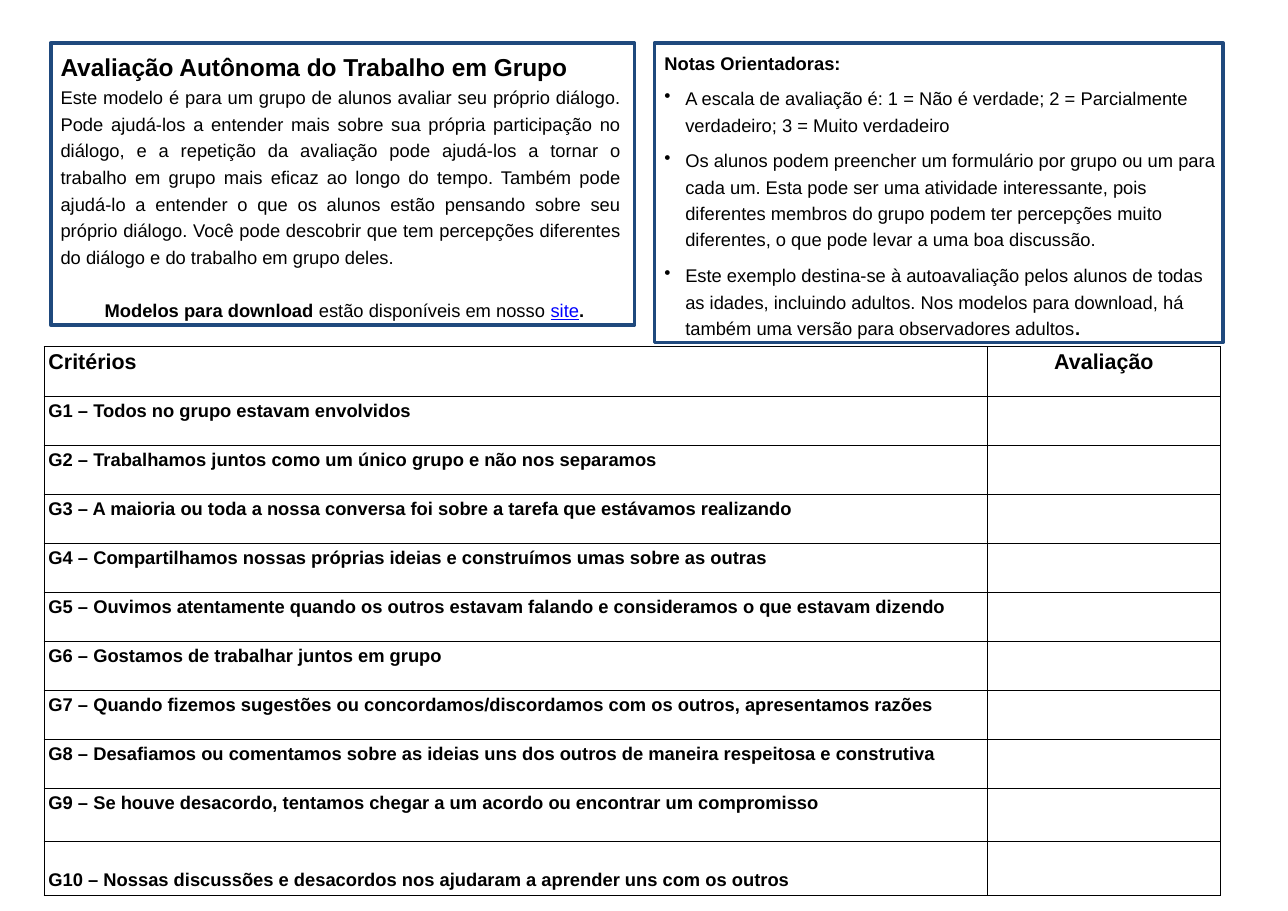
from pptx import Presentation
from pptx.dml.color import RGBColor as RGB
from pptx.enum.text import MSO_ANCHOR as Anchor, PP_ALIGN as Align
from pptx.oxml.ns import qn
from pptx.util import Inches, Pt
from lxml.etree import SubElement as Sub

THEME = {
    "font": "Arial", "ink": "000000", "frame": "1F497D", "link": "0000FF",
    "title": 16, "head": 14, "body": 12, "edge": 2.5, "rule": 0.75,
}

TITLE = "Avaliação Autônoma do Trabalho em Grupo"
INTRO = (
    "Este modelo é para um grupo de alunos avaliar seu próprio diálogo. "
    "Pode ajudá-los a entender mais sobre sua própria participação no diálogo, "
    "e a repetição da avaliação pode ajudá-los a tornar o trabalho em grupo mais "
    "eficaz ao longo do tempo. Também pode ajudá-lo a entender o que os alunos "
    "estão pensando sobre seu próprio diálogo. Você pode descobrir que tem "
    "percepções diferentes do diálogo e do trabalho em grupo deles."
)
MODELS = [
    ("Modelos para download ", "bold"),
    ("estão disponíveis em nosso ", ""),
    ("site", "link"),
    (".", "bold"),
]
NOTES_HEAD = "Notas Orientadoras:"
NOTES = [
    [("A escala de avaliação é: 1 = Não é verdade; 2 = Parcialmente verdadeiro; "
      "3 = Muito verdadeiro", "")],
    [("Os alunos podem preencher um formulário por grupo ou um para cada um. "
      "Esta pode ser uma atividade interessante, pois diferentes membros do grupo "
      "podem ter percepções muito diferentes, o que pode levar a uma boa "
      "discussão.", "")],
    [("Este exemplo destina-se à autoavaliação pelos alunos de todas as idades, "
      "incluindo adultos. Nos modelos para download, há também uma versão para "
      "observadores adultos", ""), (".", "bold")],
]
HEADS = ["Critérios", "Avaliação"]
GOALS = [
    "Todos no grupo estavam envolvidos",
    "Trabalhamos juntos como um único grupo e não nos separamos",
    "A maioria ou toda a nossa conversa foi sobre a tarefa que estávamos realizando",
    "Compartilhamos nossas próprias ideias e construímos umas sobre as outras",
    "Ouvimos atentamente quando os outros estavam falando e consideramos o que estavam dizendo",
    "Gostamos de trabalhar juntos em grupo",
    "Quando fizemos sugestões ou concordamos/discordamos com os outros, apresentamos razões",
    "Desafiamos ou comentamos sobre as ideias uns dos outros de maneira respeitosa e construtiva",
    "Se houve desacordo, tentamos chegar a um acordo ou encontrar um compromisso",
    "Nossas discussões e desacordos nos ajudaram a aprender uns com os outros",
]

INTRO_BOX = (0.46, 0.39, 5.3, 2.56)
NOTES_BOX = (5.94, 0.39, 5.16, 2.72)
GRID_AT = (0.4, 3.15)
COLS = (8.56, 2.12)
TALL = 2
SHORT = len(GOALS) + 1 - TALL
ROWS = [4.01 / SHORT] * SHORT + [0.97 / TALL] * TALL


def style(par, size="body", bold=None):
    font = par.font
    font.name = THEME["font"]
    font.size = Pt(THEME[size])
    font.bold = bold
    font.color.rgb = RGB.from_string(THEME["ink"])


def add_runs(par, parts):
    for text, look in parts:
        run = par.add_run()
        run.text = text
        if look == "bold":
            run.font.bold = True
        elif look == "link":
            run.font.underline = True
            run.font.color.rgb = RGB.from_string(THEME["link"])


def indent(par, left, first=0):
    props = par._p.get_or_add_pPr()
    props.set("marL", str(Inches(left)))
    props.set("indent", str(Inches(first)))
    return props


def add_box(slide, place, top, right=0):
    box = slide.shapes.add_textbox(*map(Inches, place))
    box.line.color.rgb = RGB.from_string(THEME["frame"])
    box.line.width = Pt(THEME["edge"])
    frame = box.text_frame
    frame.word_wrap = True
    frame.vertical_anchor = Anchor.TOP
    frame.margin_left = frame.margin_bottom = 0
    frame.margin_top, frame.margin_right = Inches(top), Inches(right)
    return frame


def add_intro(slide):
    frame = add_box(slide, INTRO_BOX, 0.03, 0.12)
    rows = [
        ([(TITLE, "bold")], "title", 0, 0),
        ([(INTRO, "")], "body", 0, 0),
        (MODELS, "body", 0.4, 17.4),
    ]
    for num, (parts, size, first, gap) in enumerate(rows):
        par = frame.add_paragraph() if num else frame.paragraphs[0]
        style(par, size)
        indent(par, 0.09, first)
        par.alignment = Align.JUSTIFY
        par.line_spacing = 1.21
        par.space_before = Pt(gap)
        add_runs(par, parts)


def add_notes(slide):
    frame = add_box(slide, NOTES_BOX, 0.08)
    head = frame.paragraphs[0]
    head.text = NOTES_HEAD
    style(head, bold=True)
    indent(head, 0.09)
    for parts in NOTES:
        par = frame.add_paragraph()
        style(par)
        par.line_spacing = 1.2
        par.space_before = Pt(6)
        props = indent(par, 0.28, -0.19)
        mark = props.makeelement(qn("a:buChar"), {"char": "•"})
        props.find(qn("a:defRPr")).addprevious(mark)
        add_runs(par, parts)


def add_edges(cell):
    props = cell._tc.get_or_add_tcPr()
    for spot, side in enumerate(("lnL", "lnR", "lnT", "lnB")):
        line = props.makeelement(qn("a:" + side), {"w": str(Pt(THEME["rule"]))})
        fill = Sub(line, qn("a:solidFill"))
        Sub(fill, qn("a:srgbClr"), val=THEME["ink"])
        props.insert(spot, line)


def add_grid(slide):
    left, top = GRID_AT
    size = (left, top, sum(COLS), sum(ROWS))
    grid = slide.shapes.add_table(len(ROWS), len(COLS), *map(Inches, size)).table
    grid.first_row = grid.horz_banding = False
    for col, width in zip(grid.columns, COLS):
        col.width = Inches(width)
    for row, height in zip(grid.rows, ROWS):
        row.height = Inches(height)
    texts = [HEADS] + [[f"G{num} – {goal}", ""] for num, goal in enumerate(GOALS, 1)]
    for r, line in enumerate(texts):
        for c, text in enumerate(line):
            cell = grid.cell(r, c)
            cell.fill.background()
            add_edges(cell)
            cell.margin_left = Inches(0 if c else 0.04)
            cell.margin_right = 0
            cell.margin_top = Inches(0.04 if r else 0.03)
            cell.margin_bottom = Inches(0.04)
            last = r == len(GOALS)
            cell.vertical_anchor = Anchor.BOTTOM if last else Anchor.TOP
            par = cell.text_frame.paragraphs[0]
            par.text = text
            style(par, "body" if r else "head", True)
            par.alignment = Align.CENTER if c else Align.LEFT


def main():
    deck = Presentation()
    deck.slide_width, deck.slide_height = Inches(11.69), Inches(8.27)
    slide = deck.slides.add_slide(deck.slide_layouts[6])
    add_intro(slide)
    add_notes(slide)
    add_grid(slide)
    deck.save("out.pptx")


if __name__ == "__main__":
    main()
